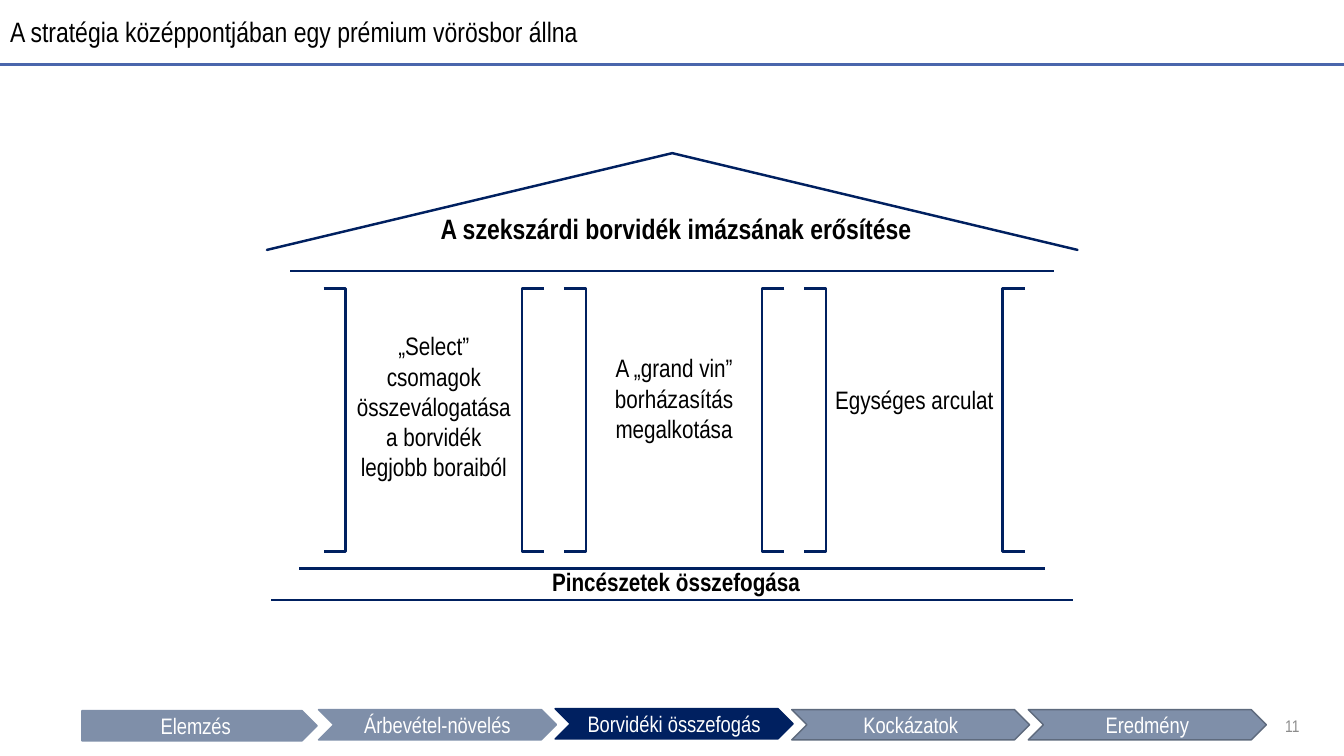
from lxml import etree
from pptx import Presentation
from pptx.dml.color import RGBColor
from pptx.enum import shapes, text
from pptx.oxml import ns
from pptx.util import Pt

FONT = "Arial Narrow"
NAVY, BLUE, SLATE, EDGE = "002060", "4A66AC", "7F8FA9", "5E6A7D"
BLACK, WHITE, GREY = "000000", "FFFFFF", "8C8C8C"
KIND, ALIGN = shapes.MSO_SHAPE, text.PP_ALIGN


def colour(value):
    """Turn a hex string into a colour."""
    return RGBColor.from_string(value)


def write(frame, words, size, ink=BLACK, bold=False, align=ALIGN.CENTER, middle=False):
    """Put one formatted run into a text frame."""
    frame.word_wrap = True
    frame.vertical_anchor = text.MSO_ANCHOR.MIDDLE if middle else text.MSO_ANCHOR.TOP
    paragraph = frame.paragraphs[0]
    paragraph.alignment = align
    run = paragraph.add_run()
    run.text = words
    run.font.name, run.font.size, run.font.bold = FONT, Pt(size), bold
    run.font.color.rgb = colour(ink)
    return paragraph


def label(slide, box, words, size, **style):
    """Add a text box with one paragraph."""
    caption = slide.shapes.add_textbox(*map(Pt, box))
    write(caption.text_frame, words, size, **style)


def rule(slide, left, right, y, ink=NAVY, weight=1.75):
    """Draw a horizontal line without shadow."""
    line = slide.shapes.add_connector(
        shapes.MSO_CONNECTOR.STRAIGHT, Pt(left), Pt(y), Pt(right), Pt(y))
    line.line.color.rgb = colour(ink)
    line.line.width = Pt(weight)
    etree.SubElement(line._element.spPr, ns.qn("a:effectLst"))


def outline(slide, kind, box, ink=NAVY, weight=1.75, fill=None):
    """Add a preset shape with a line and an optional fill."""
    shape = slide.shapes.add_shape(kind, *map(Pt, box))
    shape.shadow.inherit = False
    shape.line.color.rgb = colour(ink)
    shape.line.width = Pt(weight)
    if fill:
        shape.fill.solid()
        shape.fill.fore_color.rgb = colour(fill)
    else:
        shape.fill.background()
    return shape


def header(slide, box, words):
    """Place the title and the rule below it."""
    left, top, width, height = box
    title = slide.shapes.title
    title.left, title.top, title.width, title.height = map(Pt, (left, top, 709, height))
    title.text_frame.auto_size = text.MSO_AUTO_SIZE.NONE
    write(title.text_frame, words, 20, align=ALIGN.LEFT, middle=True).line_spacing = 0.9
    rule(slide, left, left + width, top + 46.1, BLUE, 1.5)


def pillar(slide, box, words, text_width, text_top):
    """Draw a pillar as two outward brackets around its text."""
    left, top, width, height = box
    bracket = 15.8
    for x, flipped in ((left, False), (left + width - bracket, True)):
        side = outline(slide, KIND.RIGHT_BRACKET, (x, top, bracket, height))
        side.adjustments[0] = 0
        if flipped:
            side._element.spPr.xfrm.set("flipH", "1")
    label(slide, (left + (width - text_width) / 2, top + text_top, text_width, 29),
          words, 18)


def temple(slide, box, roof_words, pillars, base_words):
    """Draw the temple: roof, pillars and base."""
    left, top, width, height = box
    rise = 69.1
    roof = outline(slide, KIND.CHEVRON, (left + (width - rise) / 2,
                                         top + (rise - width) / 2, rise, width))
    roof.adjustments[0] = 1
    roof.rotation = 270
    for inset, y in ((16.5, 84.3), (23, 296.7), (3, height)):
        rule(slide, left + inset, left + width - inset, top + y)
    for i, (words, text_width, text_top) in enumerate(pillars):
        pillar(slide, (left + 40.4 + 171.6 * i, top + 96.5, 157.6, 187.9),
               words, text_width, text_top)
    label(slide, (left + 88.5, top + 38.2, 407.5, 31.5), roof_words, 20, bold=True)
    label(slide, (left + 190, top + 291.6, 204.5, 29), base_words, 18, bold=True)


def navigation(slide, box, steps, active, page):
    """Draw the chevron steps and the page number."""
    left, top, width, height = box
    pitch = 169
    for i, words in enumerate(steps):
        kind = KIND.CHEVRON if i else KIND.PENTAGON
        fill = NAVY if i == active else SLATE
        edge = EDGE if i > active else fill
        step_top = top - 0.7 * (i == active) + 0.7 * (i == 0)
        step = outline(slide, kind, (left + pitch * i, step_top, pitch + 1 if i else pitch - 1, height),
                       edge, 1, fill)
        write(step.text_frame, words, 16, WHITE, middle=True)
    label(slide, (left + width - 30.2, top - 2.9, 30.2, 28.8), page, 12,
          ink=GREY, align=ALIGN.RIGHT, middle=True)


def main():
    """Build and save the slide."""
    deck = Presentation()
    deck.slide_width, deck.slide_height = Pt(960), Pt(540)
    slide = deck.slides.add_slide(deck.slide_layouts[5])
    header(slide, (0, 0, 960, 48.2), "A stratégia középpontjában egy prémium vörösbor állna")
    temple(slide, (190.7, 109.4, 579, 319), "A szekszárdi borvidék imázsának erősítése", [
        ("„Select” csomagok összeválogatása a borvidék legjobb boraiból", 129, 26.7),
        ("A „grand vin” borházasítás megalkotása", 145.5, 42.5),
        ("Egységes arculat", 145.5, 64.8),
    ], "Pincészetek összefogása")
    navigation(slide, (58.5, 506.9, 876.8, 21.6),
               ["Elemzés", "Árbevétel-növelés", "Borvidéki összefogás", "Kockázatok", "Eredmény"],
               2, "11")
    deck.save("out.pptx")


if __name__ == "__main__":
    main()
